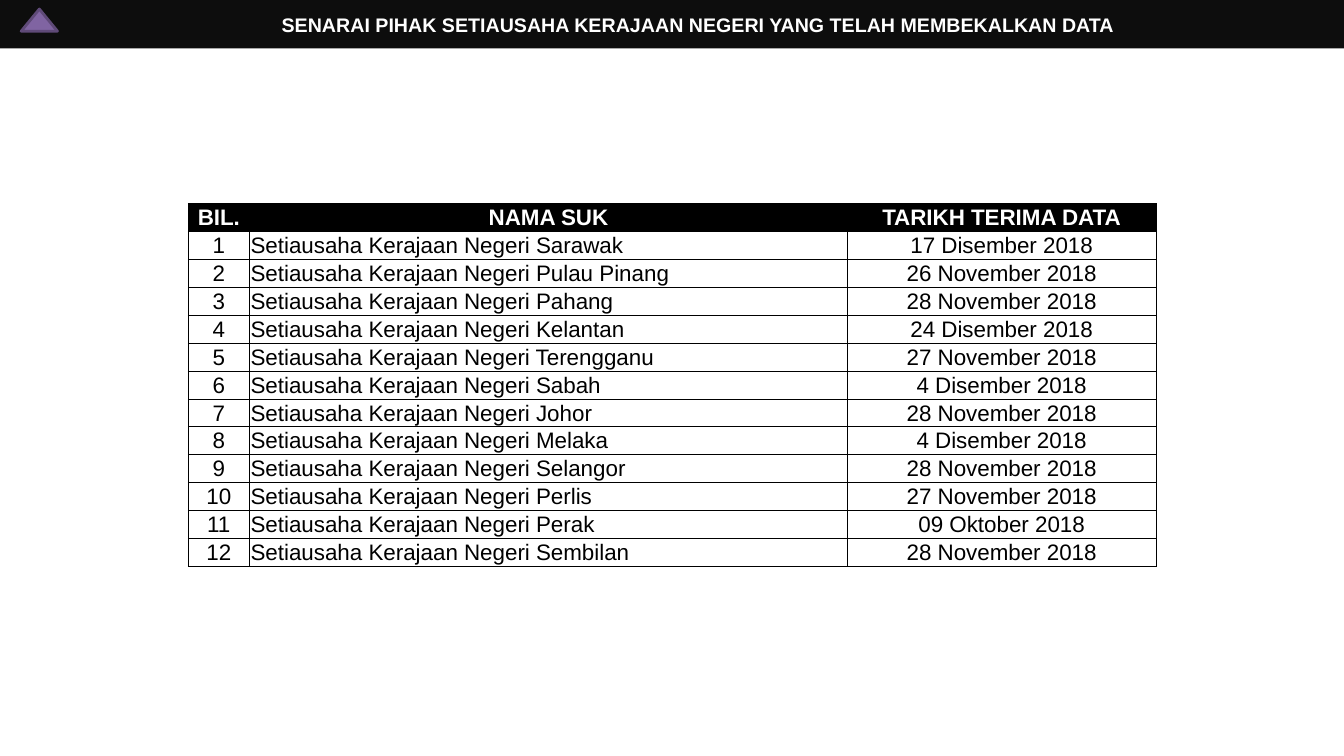
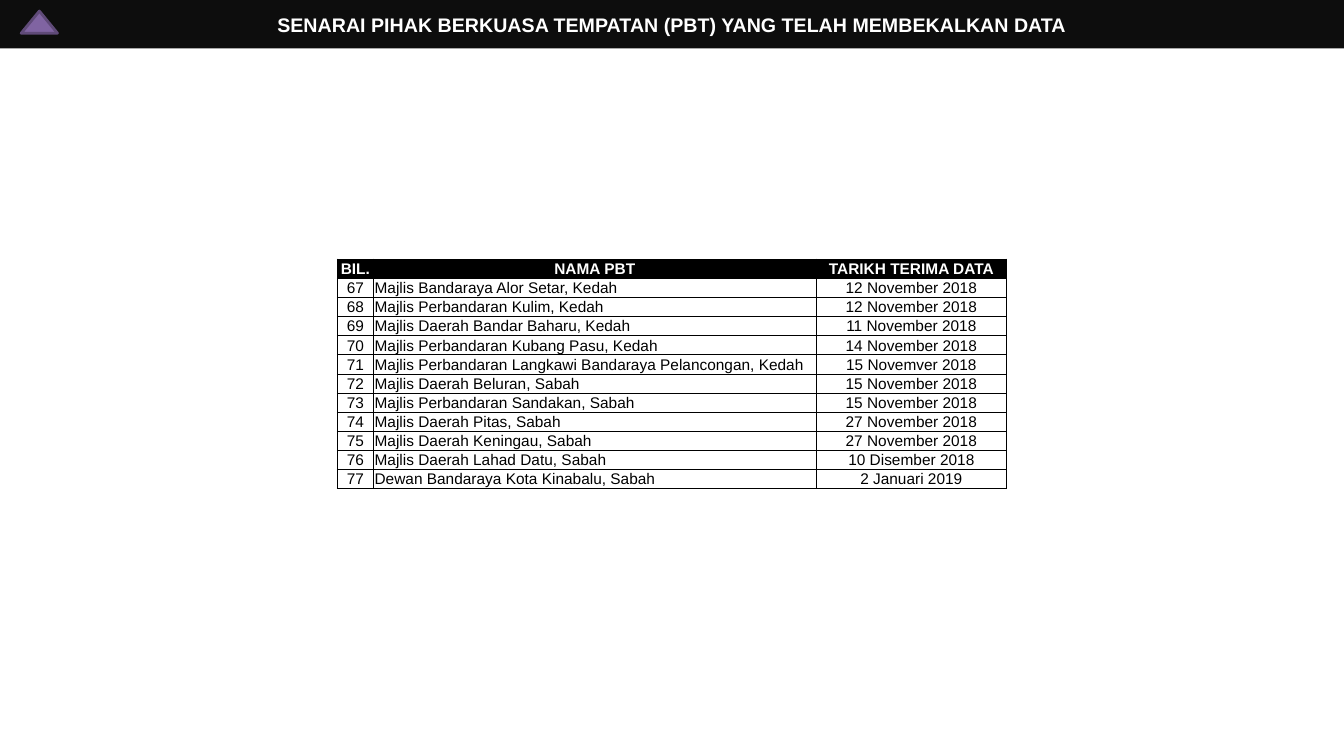
from dataclasses import dataclass

from lxml.etree import SubElement
from pptx import Presentation
from pptx.dml.color import RGBColor
from pptx.enum.shapes import MSO_SHAPE
from pptx.enum.text import MSO_ANCHOR, PP_ALIGN
from pptx.oxml.ns import qn
from pptx.util import Inches, Pt


@dataclass(frozen=True)
class Theme:
    font: str = "Arial"
    band: str = "0D0D0D"
    header: str = "000000"
    ink: str = "000000"
    light: str = "FFFFFF"
    marker: str = "8064A2"
    marker_edge: str = "5F4A78"
    title_size: int = 14
    large_size: int = 16
    small_size: int = 11
    marker_line: float = 2
    border_line: float = 0.5


THEME = Theme()
SLIDE_WIDTH = Inches(13.33)
SLIDE_HEIGHT = Inches(7.5)

STATE_ROWS = [
    (str(number), f"Setiausaha Kerajaan Negeri {state}", date)
    for number, (state, date) in enumerate([
        ("Sarawak", "17 Disember 2018"),
        ("Pulau Pinang", "26 November 2018"),
        ("Pahang", "28 November 2018"),
        ("Kelantan", "24 Disember 2018"),
        ("Terengganu", "27 November 2018"),
        ("Sabah", "4 Disember 2018"),
        ("Johor", "28 November 2018"),
        ("Melaka", "4 Disember 2018"),
        ("Selangor", "28 November 2018"),
        ("Perlis", "27 November 2018"),
        ("Perak", "09 Oktober 2018"),
        ("Sembilan", "28 November 2018"),
    ], start=1)
]

COUNCIL_ROWS = [
    (str(number), council, date)
    for number, (council, date) in enumerate([
        ("Majlis Bandaraya Alor Setar, Kedah", "12 November 2018"),
        ("Majlis Perbandaran Kulim, Kedah", "12 November 2018"),
        ("Majlis Daerah Bandar Baharu, Kedah", "11 November 2018"),
        ("Majlis Perbandaran Kubang Pasu, Kedah", "14 November 2018"),
        ("Majlis Perbandaran Langkawi Bandaraya Pelancongan, Kedah", "15 Novemver 2018"),
        ("Majlis Daerah Beluran, Sabah", "15 November 2018"),
        ("Majlis Perbandaran Sandakan, Sabah", "15 November 2018"),
        ("Majlis Daerah Pitas, Sabah", "27 November 2018"),
        ("Majlis Daerah Keningau, Sabah", "27 November 2018"),
        ("Majlis Daerah Lahad Datu, Sabah", "10 Disember 2018"),
        ("Dewan Bandaraya Kota Kinabalu, Sabah", "2 Januari 2019"),
    ], start=67)
]


def across(percent):
    return round(SLIDE_WIDTH * percent / 100)


def down(percent):
    return round(SLIDE_HEIGHT * percent / 100)


def color(value):
    return RGBColor.from_string(value)


def write(frame, text, size, ink, bold, alignment):
    frame.text = text
    para = frame.paragraphs[0]
    para.alignment = alignment
    span = para.runs[0]
    span.font.name = THEME.font
    span.font.size = Pt(size)
    span.font.bold = bold
    span.font.color.rgb = color(ink)


def add_filled_shape(page, kind, left, top, width, height, fill):
    shape = page.shapes.add_shape(
        kind, across(left), down(top), across(width), down(height))
    shape.shadow.inherit = False
    shape.fill.solid()
    shape.fill.fore_color.rgb = color(fill)
    return shape


def add_title_band(page, title, indent):
    band = add_filled_shape(page, MSO_SHAPE.RECTANGLE, 0, 0, 100, 6.4, THEME.band)
    band.line.fill.background()
    frame = band.text_frame
    frame.word_wrap = True
    frame.vertical_anchor = MSO_ANCHOR.MIDDLE
    frame.margin_left = Inches(0.12) + across(indent)
    frame.margin_right = Inches(0.12)
    frame.margin_top = frame.margin_bottom = Inches(0.06)
    write(frame, title, THEME.title_size, THEME.light, True, PP_ALIGN.CENTER)


def add_marker(page, top):
    marker = add_filled_shape(
        page, MSO_SHAPE.ISOSCELES_TRIANGLE, 1.58, top, 2.7, 2.93, THEME.marker)
    marker.line.color.rgb = color(THEME.marker_edge)
    marker.line.width = Pt(THEME.marker_line)


def add_borders(cell):
    properties = cell._tc.get_or_add_tcPr()
    for side in ("a:lnL", "a:lnR", "a:lnT", "a:lnB"):
        line = SubElement(properties, qn(side), w=str(Pt(THEME.border_line)))
        fill = SubElement(line, qn("a:solidFill"))
        SubElement(fill, qn("a:srgbClr"), val=THEME.ink)


def format_cell(cell, text, size, is_header, alignment):
    add_borders(cell)
    if is_header:
        cell.fill.solid()
        cell.fill.fore_color.rgb = color(THEME.header)
    else:
        cell.fill.background()
    cell.vertical_anchor = MSO_ANCHOR.MIDDLE
    cell.margin_left = cell.margin_right = cell.margin_top = Inches(0.01)
    cell.margin_bottom = 0
    ink = THEME.light if is_header else THEME.ink
    write(cell.text_frame, text, size, ink, is_header, alignment)


def add_list_table(page, name_heading, records, top, height, columns, size):
    rows = [("BIL.", name_heading, "TARIKH TERIMA DATA"), *records]
    width = sum(columns)
    table = page.shapes.add_table(
        len(rows), len(columns), across((100 - width) / 2), down(top),
        across(width), down(height)).table
    table.first_row = table.horz_banding = False
    for column, share in zip(table.columns, columns):
        column.width = across(share)
    for row_index, values in enumerate(rows):
        table.rows[row_index].height = down(height / len(rows))
        is_header = row_index == 0
        for column_index, text in enumerate(values):
            is_name = column_index == 1 and not is_header
            alignment = PP_ALIGN.LEFT if is_name else PP_ALIGN.CENTER
            format_cell(table.cell(row_index, column_index), text, size,
                        is_header, alignment)


def add_list_page(deck, title, marker_top, indent=0, **table_options):
    page = deck.slides.add_slide(deck.slide_layouts[6])
    add_title_band(page, title, indent)
    add_marker(page, marker_top)
    add_list_table(page, **table_options)


def main():
    deck = Presentation()
    deck.slide_width = SLIDE_WIDTH
    deck.slide_height = SLIDE_HEIGHT
    add_list_page(
        deck, "SENARAI PIHAK SETIAUSAHA KERAJAAN NEGERI YANG TELAH MEMBEKALKAN DATA",
        marker_top=1.2, indent=3.9, name_heading="NAMA SUK", records=STATE_ROWS,
        top=26.93, height=48, columns=(4.58, 44.48, 22.95), size=THEME.large_size)
    add_list_page(
        deck, "SENARAI PIHAK BERKUASA TEMPATAN (PBT) YANG TELAH MEMBEKALKAN DATA",
        marker_top=1.47, name_heading="NAMA PBT", records=COUNCIL_ROWS,
        top=34.27, height=30.4, columns=(2.7, 32.93, 14.18), size=THEME.small_size)
    deck.save("out.pptx")


if __name__ == "__main__":
    main()
